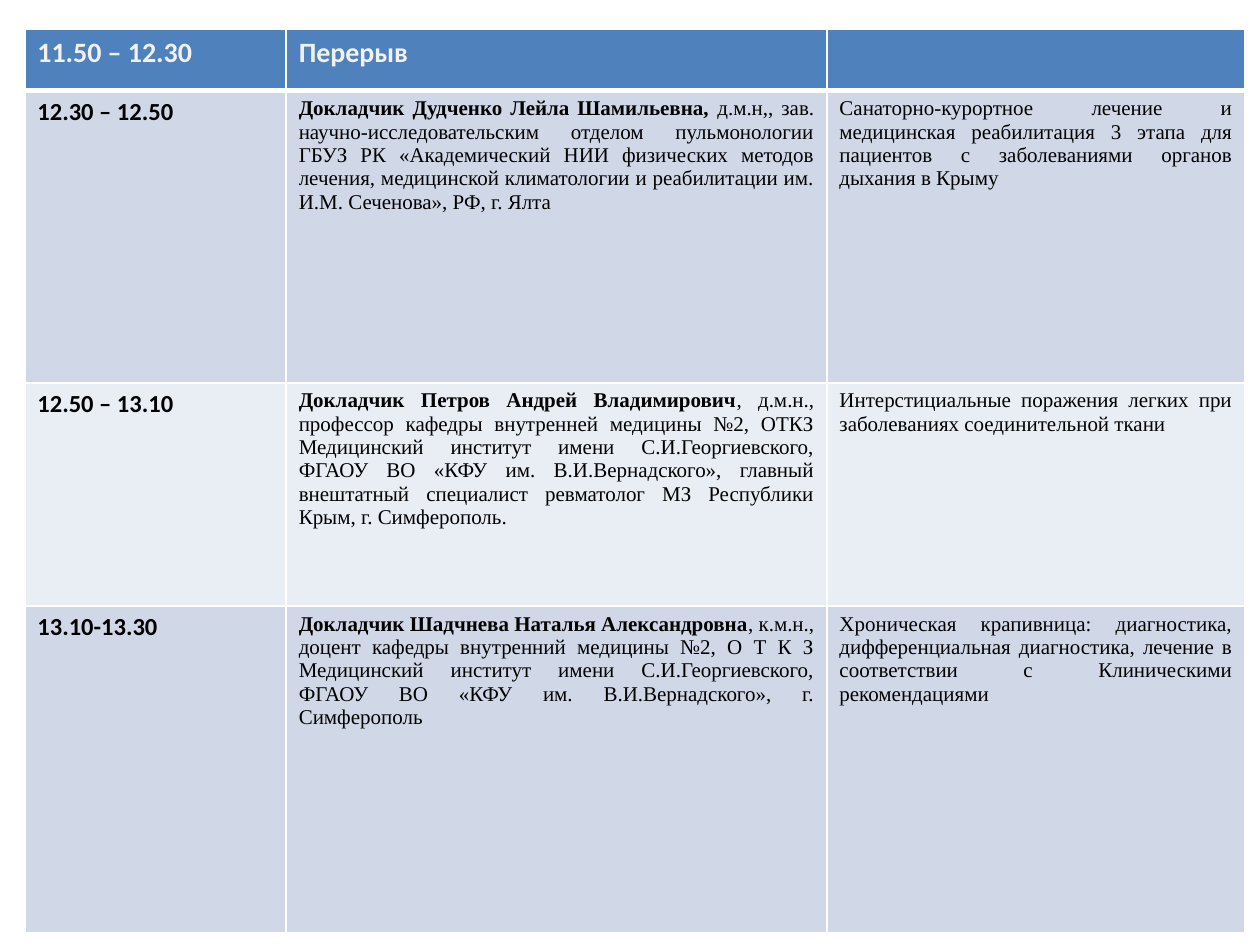
from dataclasses import dataclass

from lxml import etree
from pptx import Presentation
from pptx.dml.color import RGBColor
from pptx.enum.text import PP_ALIGN
from pptx.oxml.ns import qn
from pptx.util import Cm, Pt

LEFT = PP_ALIGN.LEFT
JUSTIFY = PP_ALIGN.JUSTIFY


@dataclass(frozen=True)
class Theme:
    heading_font: str = "Calibri"
    body_font: str = "Times New Roman"
    header_size: int = 16
    time_size: int = 14
    body_size: int = 12
    header_fill: str = "4F81BD"
    band_fills: tuple = ("D0D8E8", "E9EDF4")
    header_text: str = "F2F2F2"
    body_text: str = "000000"
    border: str = "FFFFFF"
    border_width: int = 1
    header_rule_width: int = 3


class ProgrammeSlide:
    def __init__(self, slide, theme):
        self.slide = slide
        self.theme = theme

    def add_table(self, left, top, column_widths, row_heights):
        table = self.slide.shapes.add_table(
            len(row_heights), len(column_widths), Cm(left), Cm(top),
            Cm(sum(column_widths)), Cm(sum(row_heights))).table
        for column, width in zip(table.columns, column_widths):
            column.width = Cm(width)
        for row, height in zip(table.rows, row_heights):
            row.height = Cm(height)
        return table

    def style_cell(self, cell, row_index):
        theme = self.theme
        properties = cell._tc.get_or_add_tcPr()
        for side in ("L", "R", "T", "B"):
            under_header = (row_index, side) in ((0, "B"), (1, "T"))
            width = theme.header_rule_width if under_header else theme.border_width
            line = etree.SubElement(properties, qn(f"a:ln{side}"), w=str(Pt(width)))
            fill = etree.SubElement(line, qn("a:solidFill"))
            etree.SubElement(fill, qn("a:srgbClr"), val=theme.border)
        color = theme.band_fills[(row_index - 1) % 2] if row_index else theme.header_fill
        cell.fill.solid()
        cell.fill.fore_color.rgb = RGBColor.from_string(color)

    def write_cell(self, cell, runs, font_name, size, color, alignment=LEFT):
        """Write (text, bold) runs into one paragraph."""
        paragraph = cell.text_frame.paragraphs[0]
        paragraph.alignment = alignment
        paragraph.font.name = font_name
        paragraph.font.size = Pt(size)
        paragraph.font.color.rgb = RGBColor.from_string(color)
        for text, bold in runs:
            run = paragraph.add_run()
            run.text = text
            run.font.name = font_name
            run.font.size = Pt(size)
            run.font.color.rgb = RGBColor.from_string(color)
            run.font.bold = bold

    def add_header(self, table, labels):
        theme = self.theme
        for cell, label in zip(table.rows[0].cells, labels):
            self.style_cell(cell, 0)
            runs = [(label, True)] if label else []
            self.write_cell(cell, runs, theme.heading_font, theme.header_size,
                            theme.header_text)

    def add_talk(self, table, row_index, time, speaker, position, topic):
        theme = self.theme
        time_cell, speaker_cell, topic_cell = table.rows[row_index].cells
        for cell in (time_cell, speaker_cell, topic_cell):
            self.style_cell(cell, row_index)
        self.write_cell(time_cell, [(time, True)], theme.heading_font,
                        theme.time_size, theme.body_text)
        for cell, runs in ((speaker_cell, [(speaker, True), (position, False)]),
                           (topic_cell, [(topic, False)])):
            self.write_cell(cell, runs, theme.body_font, theme.body_size,
                            theme.body_text, JUSTIFY)


HEADER = ("11.50 – 12.30", "Перерыв", "")
TALKS = (
    ("12.30 – 12.50",
     "Докладчик Дудченко Лейла Шамильевна, ",
     "д.м.н,, зав. научно-исследовательским отделом пульмонологии ГБУЗ РК "
     "«Академический НИИ физических методов лечения, медицинской климатологии "
     "и реабилитации им. И.М. Сеченова», РФ, г. Ялта",
     "Санаторно-курортное лечение и медицинская реабилитация 3 этапа "
     "для пациентов с заболеваниями органов дыхания в Крыму"),
    ("12.50 – 13.10",
     "Докладчик Петров Андрей Владимирович",
     ", д.м.н., профессор кафедры внутренней медицины №2, ОТКЗ Медицинский "
     "институт имени С.И.Георгиевского, ФГАОУ ВО «КФУ им. В.И.Вернадского», "
     "главный внештатный специалист ревматолог МЗ Республики Крым, "
     "г. Симферополь.",
     "Интерстициальные поражения легких при заболеваниях соединительной ткани"),
    ("13.10-13.30",
     "Докладчик Шадчнева Наталья Александровна",
     ", к.м.н., доцент кафедры внутренний медицины №2, О Т К З Медицинский "
     "институт имени С.И.Георгиевского, ФГАОУ ВО «КФУ им. В.И.Вернадского», "
     "г. Симферополь",
     "Хроническая крапивница: диагностика, дифференциальная диагностика, "
     "лечение в соответствии с Клиническими рекомендациями"),
)


def main():
    presentation = Presentation()
    presentation.slide_width = Cm(25.4)
    presentation.slide_height = Cm(19.05)
    blank_layout = presentation.slide_layouts[6]
    programme = ProgrammeSlide(presentation.slides.add_slide(blank_layout), Theme())

    # Programme table: time, speaker, topic
    table = programme.add_table(0.5, 0.59, column_widths=(5.27, 10.9, 8.43),
                                row_heights=(1.24, 5.89, 4.5, 6.59))
    programme.add_header(table, HEADER)
    for row_index, talk in enumerate(TALKS, start=1):
        programme.add_talk(table, row_index, *talk)

    presentation.save("out.pptx")


if __name__ == "__main__":
    main()
